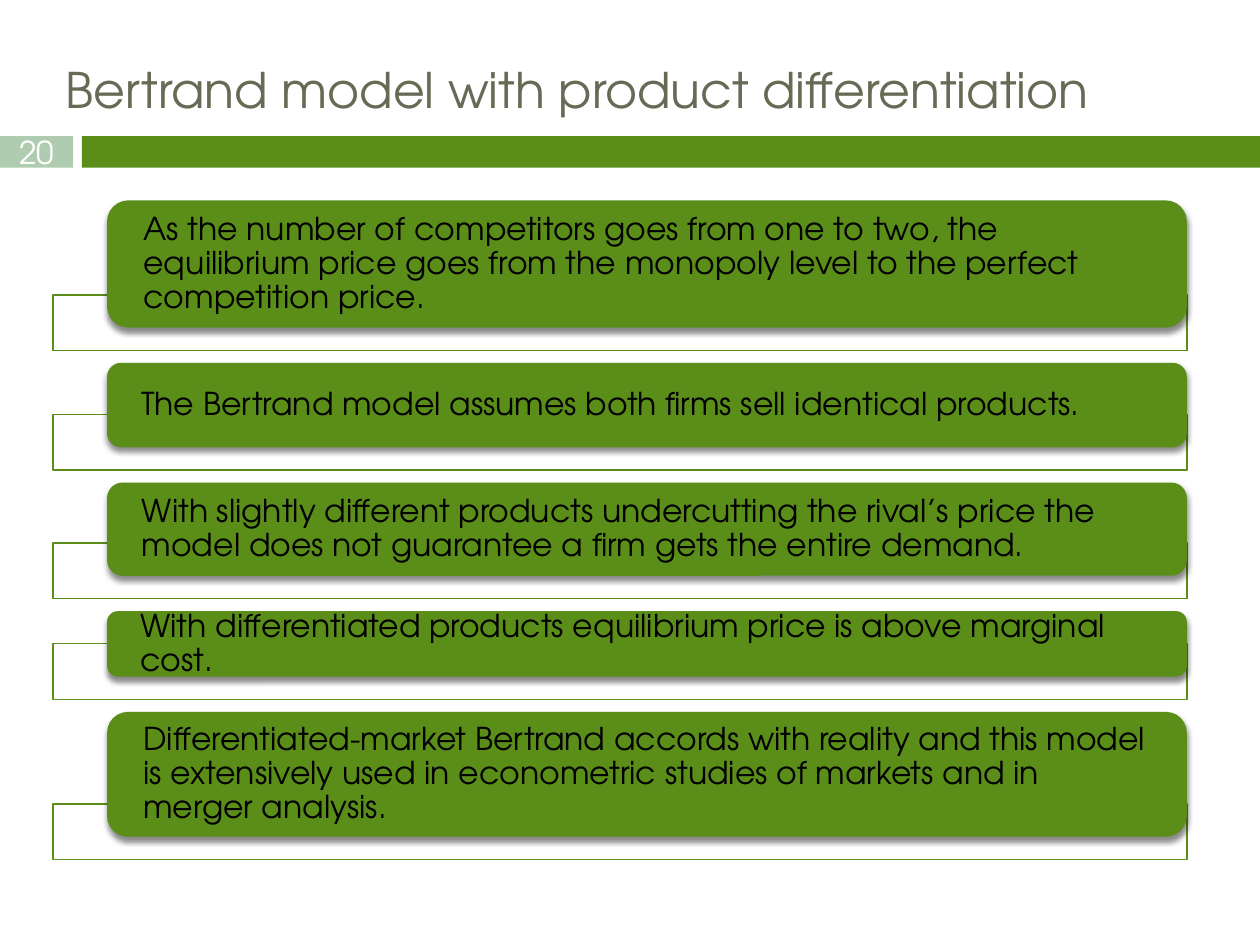
from lxml import etree
from pptx import Presentation
from pptx.dml.color import RGBColor
from pptx.enum import shapes, text
from pptx.oxml.ns import qn
from pptx.util import Inches, Pt

GREEN = RGBColor(0x5A, 0x8E, 0x19)
PALE_GREEN = RGBColor(0xB0, 0xCC, 0xB0)
OLIVE = RGBColor(0x67, 0x6A, 0x55)
WHITE = RGBColor(0xFF, 0xFF, 0xFF)
BLACK = RGBColor(0, 0, 0)
FONT = "TeX Gyre Adventor"

TITLE = "Bertrand model with product differentiation"
# Card height in inches and its statement
CARDS = [
    (1.01, "As the number of competitors goes from one to two, the equilibrium "
           "price goes from the monopoly level to the perfect competition price."),
    (0.67, "The Bertrand model assumes both firms sell identical products."),
    (0.74, "With slightly different products undercutting the rival’s price the "
           "model does not guarantee a firm gets the entire demand."),
    (0.52, "With differentiated products equilibrium price is above marginal cost."),
    (0.99, "Differentiated-market Bertrand accords with reality and this model is "
           "extensively used in econometric studies of markets and in merger analysis."),
]
FRAME_HEIGHT = 0.44
OVERLAP = 0.26   # how far a card reaches down into its frame
CARD_GAP = 0.28  # from one card to the next


def set_attributes(target, values):
    for name, value in values.items():
        setattr(target, name, value)


def add_box(slide, kind, box, fill):
    sp = slide.shapes.add_shape(kind, *map(Inches, box))
    sp.shadow.inherit = False
    sp.fill.solid()
    sp.fill.fore_color.rgb = fill
    sp.line.fill.background()
    return sp


def write(tf, words, size, color, align, **frame):
    set_attributes(tf, {"word_wrap": True, "auto_size": text.MSO_AUTO_SIZE.NONE, **frame})
    p = tf.paragraphs[0]
    p.alignment = align
    r = p.add_run()
    r.text = words
    set_attributes(r.font, {"name": FONT, "size": Pt(size)})
    r.font.color.rgb = color
    return p


def add_alpha(color_element, percent):
    etree.SubElement(color_element, qn("a:alpha"), val=str(percent * 1000))


def add_drop_shadow(sp):
    effects = sp._element.spPr.find(qn("a:effectLst"))
    shadow = etree.SubElement(effects, qn("a:outerShdw"), blurRad=str(Pt(3)),
                              dist=str(Pt(2.4)), dir="5400000", rotWithShape="0")
    add_alpha(etree.SubElement(shadow, qn("a:srgbClr"), val=str(BLACK)), 45)


def add_title(slide, box):
    title = slide.shapes.title
    set_attributes(title, dict(zip(("left", "top", "width", "height"), map(Inches, box))))
    write(title.text_frame, TITLE, 28, OLIVE, text.PP_ALIGN.LEFT,
          vertical_anchor=text.MSO_ANCHOR.TOP)


def add_number_band(slide, box, number):
    left, top, width, height = box
    number_width, bar_offset = 0.58, 0.65
    rect = shapes.MSO_SHAPE.RECTANGLE
    add_box(slide, rect, (left + bar_offset, top, width - bar_offset, height), GREEN)
    tag = add_box(slide, rect, (left, top, number_width, height), PALE_GREEN)
    write(tag.text_frame, number, 18, WHITE, text.PP_ALIGN.CENTER,
          vertical_anchor=text.MSO_ANCHOR.MIDDLE,
          margin_left=0, margin_right=0, margin_top=0, margin_bottom=0)


def add_statement(slide, box, words):
    """A raised card over the upper part of an outlined frame."""
    left, top, width, height = box
    indent = 0.43
    frame = add_box(slide, shapes.MSO_SHAPE.RECTANGLE,
                    (left, top + height - OVERLAP, width, FRAME_HEIGHT), WHITE)
    add_alpha(frame._element.spPr.find(qn("a:solidFill"))[0], 90)
    frame.line.color.rgb = GREEN
    frame.line.width = Pt(0.79)

    card = add_box(slide, shapes.MSO_SHAPE.ROUNDED_RECTANGLE,
                   (left + indent, top, width - indent, height), GREEN)
    add_drop_shadow(card)
    p = write(card.text_frame, words, 18, BLACK, text.PP_ALIGN.LEFT,
              vertical_anchor=text.MSO_ANCHOR.MIDDLE,
              margin_left=Inches(0.24), margin_right=Inches(0.24),
              margin_top=0, margin_bottom=0)
    p.line_spacing = 0.9


def add_statements(slide, left, top, width):
    for height, words in CARDS:
        add_statement(slide, (left, top, width, height), words)
        top += height + CARD_GAP


def main():
    prs = Presentation()
    prs.slide_width, prs.slide_height = Inches(10), Inches(7.5)
    slide = prs.slides.add_slide(prs.slide_layouts[5])
    add_number_band(slide, (0, 1.08, 10, 0.25), "20")
    add_title(slide, (0.42, 0.42, 9.83, 0.65))
    add_statements(slide, 0.42, 1.59, 9)
    prs.save("out.pptx")


if __name__ == "__main__":
    main()
